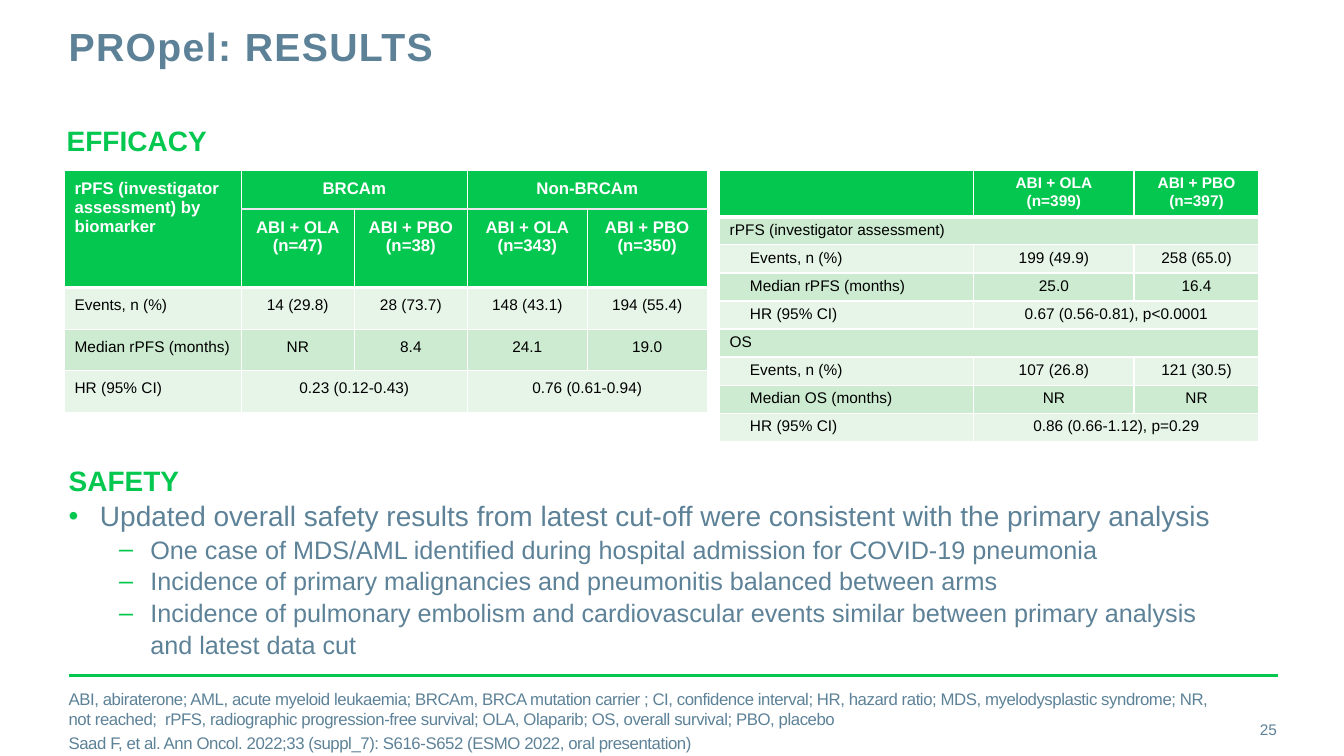
"""Builds the PROpel results slide."""
import lxml.etree
import pptx
import pptx.dml.color
import pptx.enum.shapes
import pptx.enum.text
import pptx.oxml.ns
import pptx.util

Cm = pptx.util.Cm
Pt = pptx.util.Pt
ALIGN = pptx.enum.text.PP_ALIGN
ANCHOR = pptx.enum.text.MSO_ANCHOR
GREEN, SLATE, WHITE, BLACK = "03C74F", "5D8298", "FFFFFF", "000000"
PALE, TINT, LILAC = "E7F5E9", "CCEBD0", "ECE6ED"


def color(value):
    return pptx.dml.color.RGBColor.from_string(value)


def add_child(parent, tag, **attributes):
    child = lxml.etree.SubElement(parent, pptx.oxml.ns.qn(tag))
    for name, value in attributes.items():
        child.set(name, str(value))
    return child


def write(frame, text, size=11, fill=SLATE, bold=False, align=ALIGN.LEFT, tracking=0,
          left=0, hanging=0, bullet=None, before=0, spacing=None):
    first = len(frame.paragraphs) == 1 and not frame.paragraphs[0].runs
    paragraph = frame.paragraphs[0] if first else frame.add_paragraph()
    properties = paragraph._p.get_or_add_pPr()
    properties.set("marL", str(Cm(left)))
    properties.set("indent", str(Cm(-hanging)))
    if bullet:
        add_child(add_child(properties, "a:buClr"), "a:srgbClr", val=GREEN)
        add_child(properties, "a:buFont", typeface="Arial")
        add_child(properties, "a:buChar", char=bullet)
    paragraph.alignment = align
    if spacing:
        paragraph.line_spacing = spacing
    if before and not first:
        paragraph.space_before = Pt(before)
    for number, line in enumerate(text.split("\n")):
        if number:
            paragraph.add_line_break()
        run = paragraph.add_run()
        run.text = line
        run.font.name = "Arial"
        run.font.size = Pt(size)
        run.font.bold = bold
        run.font.color.rgb = color(fill)
        if tracking:
            run._r.get_or_add_rPr().set("spc", str(tracking))


def set_borders(cell, top, bottom):
    properties = cell._tc.get_or_add_tcPr()
    sides = {"a:lnL": (WHITE, 1), "a:lnR": (WHITE, 1), "a:lnT": top, "a:lnB": bottom}
    for position, (tag, (line_color, width)) in enumerate(sides.items()):
        border = add_child(properties, tag, w=Pt(width))
        add_child(add_child(border, "a:solidFill"), "a:srgbClr", val=line_color)
        properties.insert(position, border)


class SlideBuilder:
    """Holds the slide and adds each kind of element to it."""

    def __init__(self, slide):
        self.slide = slide

    def text_box(self, left, top, width, height, anchor=ANCHOR.TOP, margins=(0, 0, 0, 0)):
        shape = self.slide.shapes.add_textbox(Cm(left), Cm(top), Cm(width), Cm(height))
        frame = shape.text_frame
        frame.word_wrap = True
        frame.vertical_anchor = anchor
        (frame.margin_left, frame.margin_top,
         frame.margin_right, frame.margin_bottom) = map(Cm, margins)
        return frame

    def rule(self, left, right, top):
        line = self.slide.shapes.add_connector(
            pptx.enum.shapes.MSO_CONNECTOR.STRAIGHT, Cm(left), Cm(top), Cm(right), Cm(top))
        line.line.color.rgb = color(GREEN)
        line.line.width = Pt(2)
        add_child(line._element.spPr, "a:effectLst")

    def table(self, left, top, widths, heights, rows, merges, fills, headers,
              header_size, padding, indented=()):
        table = self.slide.shapes.add_table(
            len(rows), len(widths), Cm(left), Cm(top), Cm(sum(widths)), Cm(sum(heights))).table
        for column, width in zip(table.columns, widths):
            column.width = Cm(width)
        for row, height in zip(table.rows, heights):
            row.height = Cm(height)
        for r, row in enumerate(rows):
            is_header = r < headers
            for c, text in enumerate(row):
                cell = table.cell(r, c)
                cell.margin_left = cell.margin_right = Cm(0.25)
                cell.margin_top = cell.margin_bottom = Cm(padding)
                cell.fill.solid()
                cell.fill.fore_color.rgb = color(fills[r])
                edges = [(WHITE, 3) if edge == headers else
                         (LILAC, 1.5) if 0 < edge < headers and c else (WHITE, 1)
                         for edge in (r, r + 1)]
                if is_header and not c:
                    edges[1] = (WHITE, 3)
                set_borders(cell, *edges)
                indent = r in indented and c == 0
                for line in text.split("\n"):
                    write(cell.text_frame, line, size=header_size if is_header else 11,
                          fill=WHITE if is_header else BLACK, bold=is_header,
                          align=ALIGN.CENTER if c else ALIGN.LEFT,
                          left=1.27 if indent else 0, hanging=0.76 if indent else 0)
        for r, c, last_r, last_c in merges:
            table.cell(r, c).merge(table.cell(last_r, last_c))


def main():
    presentation = pptx.Presentation()
    presentation.slide_width, presentation.slide_height = Cm(33.87), Cm(19.05)
    builder = SlideBuilder(presentation.slides.add_slide(presentation.slide_layouts[6]))

    builder.rule(1.73, 32.2, 17.02)
    write(builder.text_box(1.68, 3.12, 30.45, 1.96), "EFFICACY", size=20, fill=GREEN, bold=True)
    write(builder.text_box(1.73, 0.69, 24.28, 2.24), "PROpel: RESULTS", size=28, bold=True,
          tracking=100, spacing=Pt(30))
    write(builder.text_box(30, 17.86, 2.18, 1.02, ANCHOR.MIDDLE), "25", align=ALIGN.RIGHT)

    footnotes = builder.text_box(1.73, 17.65, 28.8, 1.02, ANCHOR.MIDDLE)
    for note in (
        "ABI, abiraterone; AML, acute myeloid leukaemia; BRCAm, BRCA mutation carrier ; "
        "CI, confidence interval; HR, hazard ratio; MDS, myelodysplastic syndrome; NR, "
        "not reached;  rPFS, radiographic progression-free survival; OLA, Olaparib; "
        "OS, overall survival; PBO, placebo",
        "Saad F, et al. Ann Oncol. 2022;33 (suppl_7): S616-S652 (ESMO 2022, oral presentation)",
    ):
        write(footnotes, note, size=12, tracking=-30, before=3)

    biomarker_rows = [
        ["rPFS (investigator assessment) by biomarker", "BRCAm", "", "Non-BRCAm", ""],
        ["", "ABI + OLA\n(n=47)", "ABI + PBO\n(n=38)", "ABI + OLA\n(n=343)", "ABI + PBO\n(n=350)"],
        ["Events, n (%)", "14 (29.8)", "28 (73.7)", "148 (43.1)", "194 (55.4)"],
        ["Median rPFS (months)", "NR", "8.4", "24.1", "19.0"],
        ["HR (95% CI)", "0.23 (0.12-0.43)", "", "0.76 (0.61-0.94)", ""],
    ]
    builder.table(1.63, 4.29, [4.45, 2.85, 2.85, 3.02, 3.02], [0.94, 1.86] + [1.05] * 3,
                  biomarker_rows,
                  merges=[(0, 0, 1, 0), (0, 1, 0, 2), (0, 3, 0, 4), (4, 1, 4, 2), (4, 3, 4, 4)],
                  fills=[GREEN, GREEN, PALE, TINT, PALE], headers=2, header_size=12, padding=0.23)

    overall_rows = [
        ["", "ABI + OLA\n(n=399)", "ABI + PBO\n(n=397)"],
        ["rPFS (investigator assessment)", "", ""],
        ["Events, n (%)", "199 (49.9)", "258 (65.0)"],
        ["Median rPFS (months)", "25.0", "16.4"],
        ["HR (95% CI)", "0.67 (0.56-0.81), p<0.0001", ""],
        ["OS", "", ""],
        ["Events, n (%)", "107 (26.8)", "121 (30.5)"],
        ["Median OS (months)", "NR", "NR"],
        ["HR (95% CI)", "0.86 (0.66-1.12), p=0.29", ""],
    ]
    builder.table(18.14, 4.29, [6.4, 4.04, 3.15], [1.14] + [0.69] * 8, overall_rows,
                  merges=[(1, 0, 1, 2), (4, 1, 4, 2), (5, 0, 5, 2), (8, 1, 8, 2)],
                  fills=[GREEN] + [TINT, PALE, TINT, PALE] * 2, headers=1, header_size=11,
                  padding=0.12, indented=(2, 3, 4, 6, 7, 8))

    safety = builder.text_box(1.73, 11.51, 30.81, 5.05, margins=(0, 0.13, 0.25, 0.13))
    write(safety, "SAFETY", size=20, fill=GREEN, bold=True, spacing=1.05)
    write(safety, "Updated overall safety results from latest cut-off were consistent with "
          "the primary analysis", size=20, left=0.79, hanging=0.79, bullet="•", spacing=1.05)
    for finding in (
        "One case of MDS/AML identified during hospital admission for COVID-19 pneumonia",
        "Incidence of primary malignancies and pneumonitis balanced between arms",
        "Incidence of pulmonary embolism and cardiovascular events similar between "
        "primary analysis \nand latest data cut",
    ):
        write(safety, finding, size=18, left=2.06, hanging=0.79, bullet="–", spacing=1.05)

    presentation.save("out.pptx")


if __name__ == "__main__":
    main()
